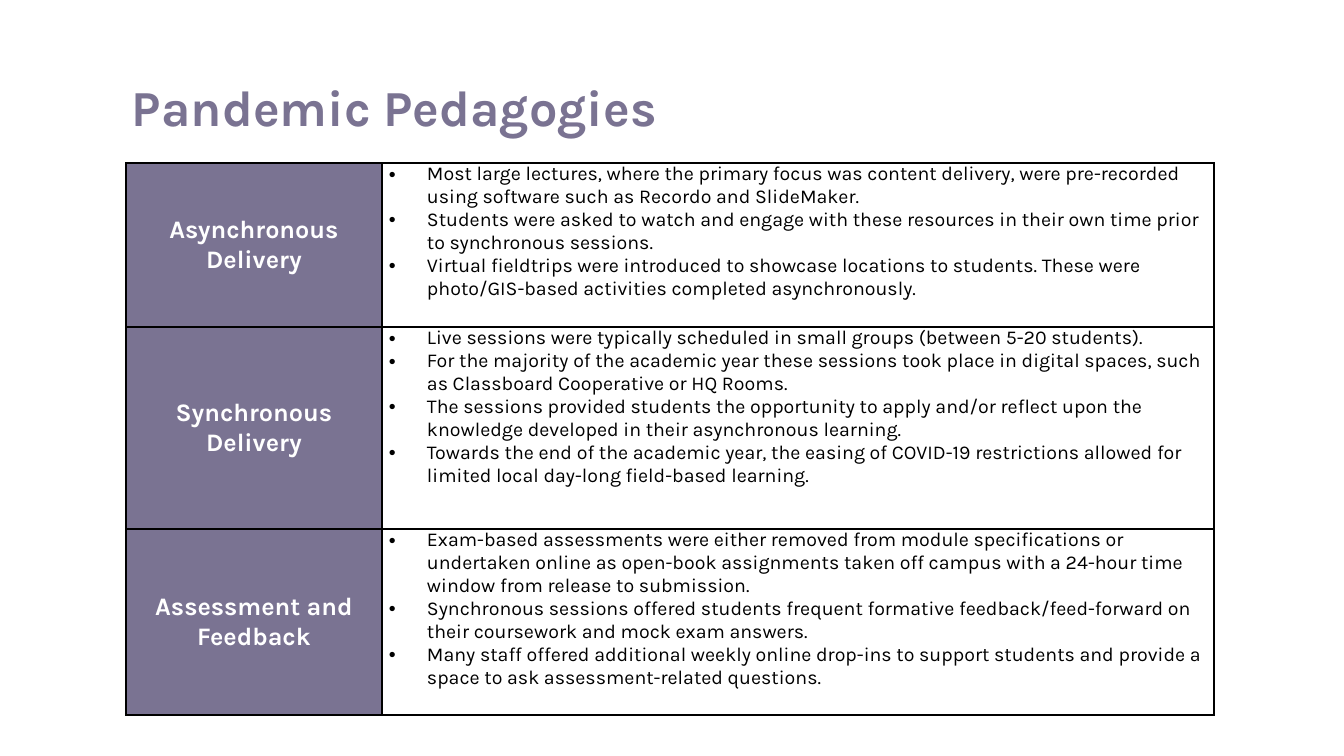
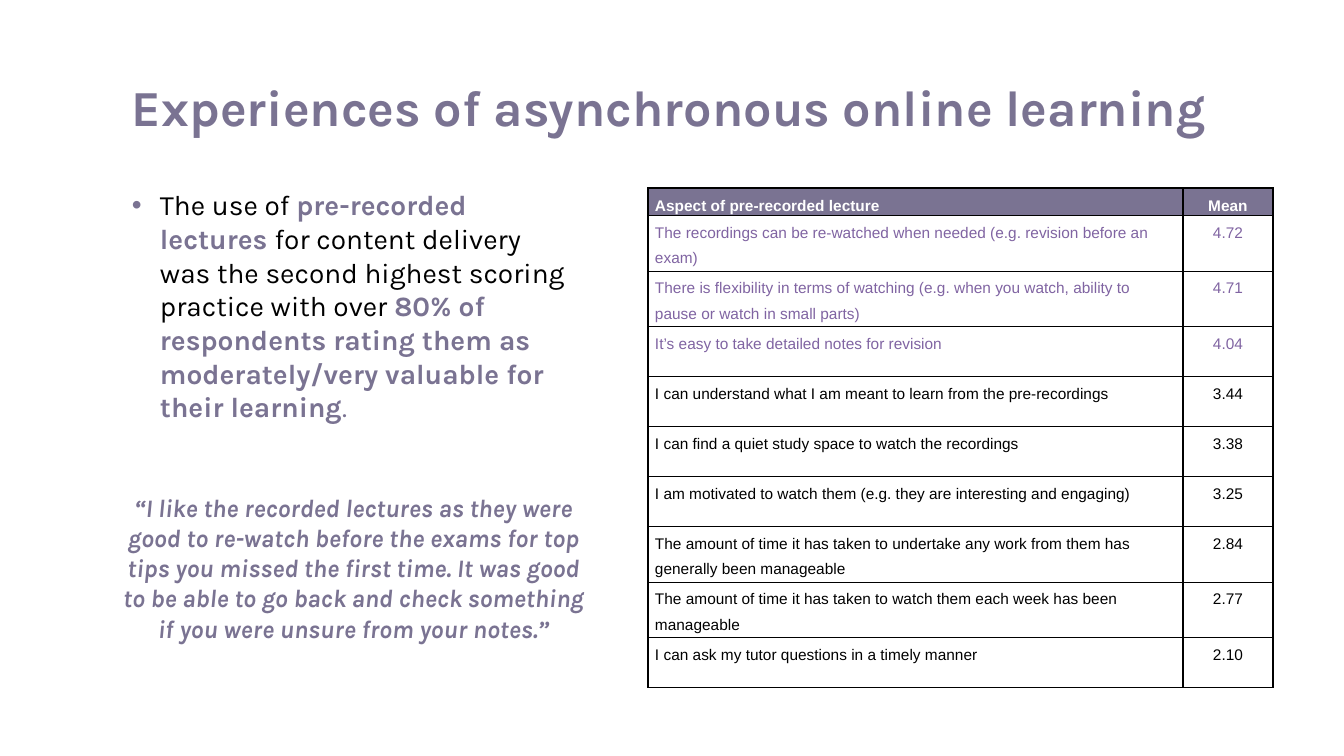
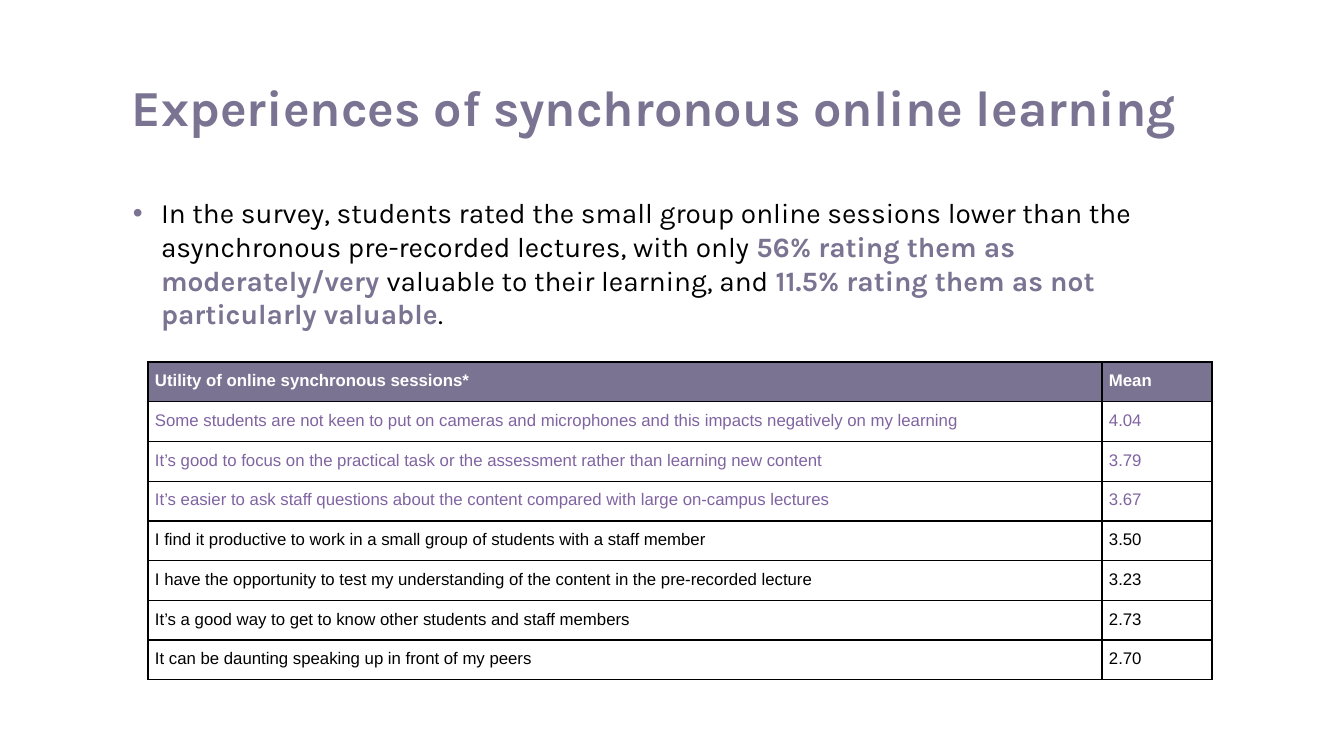
from dataclasses import dataclass

from lxml.etree import SubElement
from pptx import Presentation
from pptx.dml.color import RGBColor as RGB
from pptx.enum.text import MSO_ANCHOR as Anchor, PP_ALIGN as Align
from pptx.oxml.ns import qn
from pptx.util import Emu, Pt


@dataclass(frozen=True)
class Theme:
    purple: str = "7A7392"
    violet: str = "8064A2"
    black: str = "000000"
    white: str = "FFFFFF"
    main_font: str = "Karla"
    data_font: str = "Arial"
    title_size: int = 36
    body_size: int = 20
    quote_size: int = 18
    detail_size: int = 14
    border: int = 1


THEME = Theme()

# Content
PEDAGOGIES = [
    ("Asynchronous Delivery", [
        "Most large lectures, where the primary focus was content delivery, were "
        "pre-recorded using software such as Recordo and SlideMaker.",
        "Students were asked to watch and engage with these resources in their own "
        "time prior to synchronous sessions.",
        "Virtual fieldtrips were introduced to showcase locations to students. These "
        "were photo/GIS-based activities completed asynchronously.",
    ]),
    ("Synchronous Delivery", [
        "Live sessions were typically scheduled in small groups (between 5-20 students).",
        "For the majority of the academic year these sessions took place in digital "
        "spaces, such as Classboard Cooperative or HQ Rooms.",
        "The sessions provided students the opportunity to apply and/or reflect upon "
        "the knowledge developed in their asynchronous learning.",
        "Towards the end of the academic year, the easing of COVID-19 restrictions "
        "allowed for limited local day-long field-based learning.",
    ]),
    ("Assessment and Feedback", [
        "Exam-based assessments were either removed from module specifications or "
        "undertaken online as open-book assignments taken off campus with a 24-hour "
        "time window from release to submission.",
        "Synchronous sessions offered students frequent formative "
        "feedback/feed-forward on their coursework and mock exam answers.",
        "Many staff offered additional weekly online drop-ins to support students and "
        "provide a space to ask assessment-related questions.",
    ]),
]

# Each run: text, colour, bold
RECORDED_FINDING = [
    ("The use of ", THEME.black, False),
    ("pre-recorded lectures ", THEME.purple, True),
    ("for content delivery was the second highest scoring practice with over ",
     THEME.black, False),
    ("80% of respondents rating them as moderately/very valuable for their learning",
     THEME.purple, True),
    (".", THEME.purple, False),
]
QUOTE = (
    "“I like the recorded lectures as they were good to re-watch before the exams for "
    "top tips you missed the first time. It was good to be able to go back and check "
    "something if you were unsure from your notes.”"
)
RECORDED_SCORES = [
    ("Aspect of pre-recorded lecture", "Mean"),
    ("The recordings can be re-watched when needed (e.g. revision before an exam)", "4.72"),
    ("There is flexibility in terms of watching (e.g. when you watch, ability to pause "
     "or watch in small parts)", "4.71"),
    ("It’s easy to take detailed notes for revision", "4.04"),
    ("I can understand what I am meant to learn from the pre-recordings", "3.44"),
    ("I can find a quiet study space to watch the recordings", "3.38"),
    ("I am motivated to watch them (e.g. they are interesting and engaging)", "3.25"),
    ("The amount of time it has taken to undertake any work from them has generally "
     "been manageable", "2.84"),
    ("The amount of time it has taken to watch them each week has been manageable", "2.77"),
    ("I can ask my tutor questions in a timely manner", "2.10"),
]

SESSION_FINDING = [
    ("In the survey, students rated the small group online sessions lower than the "
     "asynchronous pre-recorded lectures, with only ", THEME.black, False),
    ("56% rating them as moderately/very ", THEME.purple, True),
    ("valuable to their learning, and ", THEME.black, False),
    ("11.5% rating them as not particularly valuable", THEME.purple, True),
    (".", THEME.black, False),
]
SESSION_SCORES = [
    ("Utility of online synchronous sessions*", "Mean"),
    ("Some students are not keen to put on cameras and microphones and this impacts "
     "negatively on my learning", "4.04"),
    ("It’s good to focus on the practical task or the assessment rather than learning "
     "new content", "3.79"),
    ("It’s easier to ask staff questions about the content compared with large "
     "on-campus lectures", "3.67"),
    ("I find it productive to work in a small group of students with a staff member", "3.50"),
    ("I have the opportunity to test my understanding of the content in the "
     "pre-recorded lecture", "3.23"),
    ("It’s a good way to get to know other students and staff members", "2.73"),
    ("It can be daunting speaking up in front of my peers", "2.70"),
]
TOP_SCORES = 3


def px(length):
    return Emu(round(length * 914400 / 100.8))


# Text
def style(paragraph, size, color=None, bold=None, italic=None,
          font=THEME.main_font, align=Align.LEFT):
    paragraph.alignment = align
    paragraph.font.name = font
    paragraph.font.size = Pt(size)
    paragraph.font.bold = bold
    paragraph.font.italic = italic
    if color:
        paragraph.font.color.rgb = RGB.from_string(color)


def add_bullet(paragraph, left, hanging, color=THEME.black):
    props = paragraph._p.get_or_add_pPr()
    props.set("marL", str(px(left)))
    props.set("indent", str(-px(hanging)))
    SubElement(SubElement(props, qn("a:buClr")), qn("a:srgbClr"), val=color)
    SubElement(props, qn("a:buFont"), typeface="Arial")
    SubElement(props, qn("a:buChar"), char="•")


def add_text_frame(slide, left, top, width, height, inset=True):
    frame = slide.shapes.add_textbox(px(left), px(top), px(width), px(height)).text_frame
    frame.word_wrap = True
    if not inset:
        frame.margin_left = frame.margin_right = 0
        frame.margin_top = frame.margin_bottom = 0
    return frame


def add_titled_slide(deck, title):
    slide = deck.slides.add_slide(deck.slide_layouts[6])
    heading = add_text_frame(slide, 132, 76, 1096, 112, inset=False).paragraphs[0]
    heading.text = title
    style(heading, THEME.title_size, THEME.purple, bold=True)
    return slide


def add_finding(slide, runs, left, top, width, height):
    finding = add_text_frame(slide, left, top, width, height, inset=False).paragraphs[0]
    add_bullet(finding, 29, 28, THEME.purple)
    style(finding, THEME.body_size)
    for text, color, bold in runs:
        run = finding.add_run()
        run.text = text
        run.font.bold = bold
        run.font.color.rgb = RGB.from_string(color)


# Tables
def format_cell(cell, fill=None, anchor=Anchor.TOP):
    props = cell._tc.get_or_add_tcPr()
    for side in ("lnL", "lnR", "lnT", "lnB"):
        line = SubElement(props, qn(f"a:{side}"), w=str(Pt(THEME.border)))
        SubElement(SubElement(line, qn("a:solidFill")), qn("a:srgbClr"), val=THEME.black)
    if fill:
        cell.fill.solid()
        cell.fill.fore_color.rgb = RGB.from_string(fill)
    else:
        cell.fill.background()
    cell.margin_left = cell.margin_right = px(7)
    cell.margin_top = cell.margin_bottom = 0
    cell.vertical_anchor = anchor


def add_grid(slide, left, top, widths, heights):
    table = slide.shapes.add_table(len(heights), len(widths), px(left), px(top),
                                   px(sum(widths)), px(sum(heights))).table
    table.first_row = table.horz_banding = False
    for column, width in zip(table.columns, widths):
        column.width = px(width)
    for row, height in zip(table.rows, heights):
        row.height = px(height)
    return table


def add_pedagogies(slide, left, top, widths, heights):
    table = add_grid(slide, left, top, widths, heights)
    for row, (topic, details) in enumerate(PEDAGOGIES):
        topic_cell, detail_cell = table.cell(row, 0), table.cell(row, 1)
        format_cell(topic_cell, THEME.purple, Anchor.MIDDLE)
        topic_cell.text = topic
        style(topic_cell.text_frame.paragraphs[0], THEME.quote_size, THEME.white,
              bold=True, align=Align.CENTER)
        format_cell(detail_cell)
        detail_cell.text = "\n".join(details)
        for detail in detail_cell.text_frame.paragraphs:
            add_bullet(detail, 38, 38)
            style(detail, THEME.detail_size, THEME.black)


def add_scores(slide, scores, left, top, widths, heights, size,
               mean_align=Align.LEFT, header_anchor=Anchor.TOP):
    table = add_grid(slide, left, top, widths, heights)
    for row, entry in enumerate(scores):
        header = row == 0
        color = (THEME.white if header
                 else THEME.violet if row <= TOP_SCORES else THEME.black)
        for column, (text, align) in enumerate(zip(entry, (Align.LEFT, mean_align))):
            cell = table.cell(row, column)
            format_cell(cell, THEME.purple if header else None,
                        header_anchor if header else Anchor.TOP)
            cell.text = text
            paragraph = cell.text_frame.paragraphs[0]
            paragraph.line_spacing = 1.5
            style(paragraph, size, color, bold=header, font=THEME.data_font, align=align)


def main():
    deck = Presentation()
    deck.slide_width, deck.slide_height = px(1344), px(756)

    # Pandemic pedagogies
    slide = add_titled_slide(deck, "Pandemic Pedagogies")
    add_pedagogies(slide, 126, 163, (256, 832), (164, 202, 186))

    # Asynchronous learning
    slide = add_titled_slide(deck, "Experiences of asynchronous online learning")
    add_finding(slide, RECORDED_FINDING, 131, 188, 444, 270)
    add_scores(slide, RECORDED_SCORES, 648, 188, (535, 90),
               [10] + [50] * (len(RECORDED_SCORES) - 1), size=11,
               mean_align=Align.CENTER, header_anchor=Anchor.MIDDLE)
    quote = add_text_frame(slide, 110, 487, 487, 194).paragraphs[0]
    quote.text = QUOTE
    style(quote, THEME.quote_size, THEME.purple, bold=True, italic=True,
          align=Align.CENTER)

    # Synchronous learning
    slide = add_titled_slide(deck, "Experiences of synchronous online learning")
    add_finding(slide, SESSION_FINDING, 132, 196, 1096, 150)
    row_height = 318 / len(SESSION_SCORES)
    add_scores(slide, SESSION_SCORES, 148, 362, (954, 110),
               [row_height] * len(SESSION_SCORES), size=12)

    deck.save("out.pptx")


if __name__ == "__main__":
    main()
